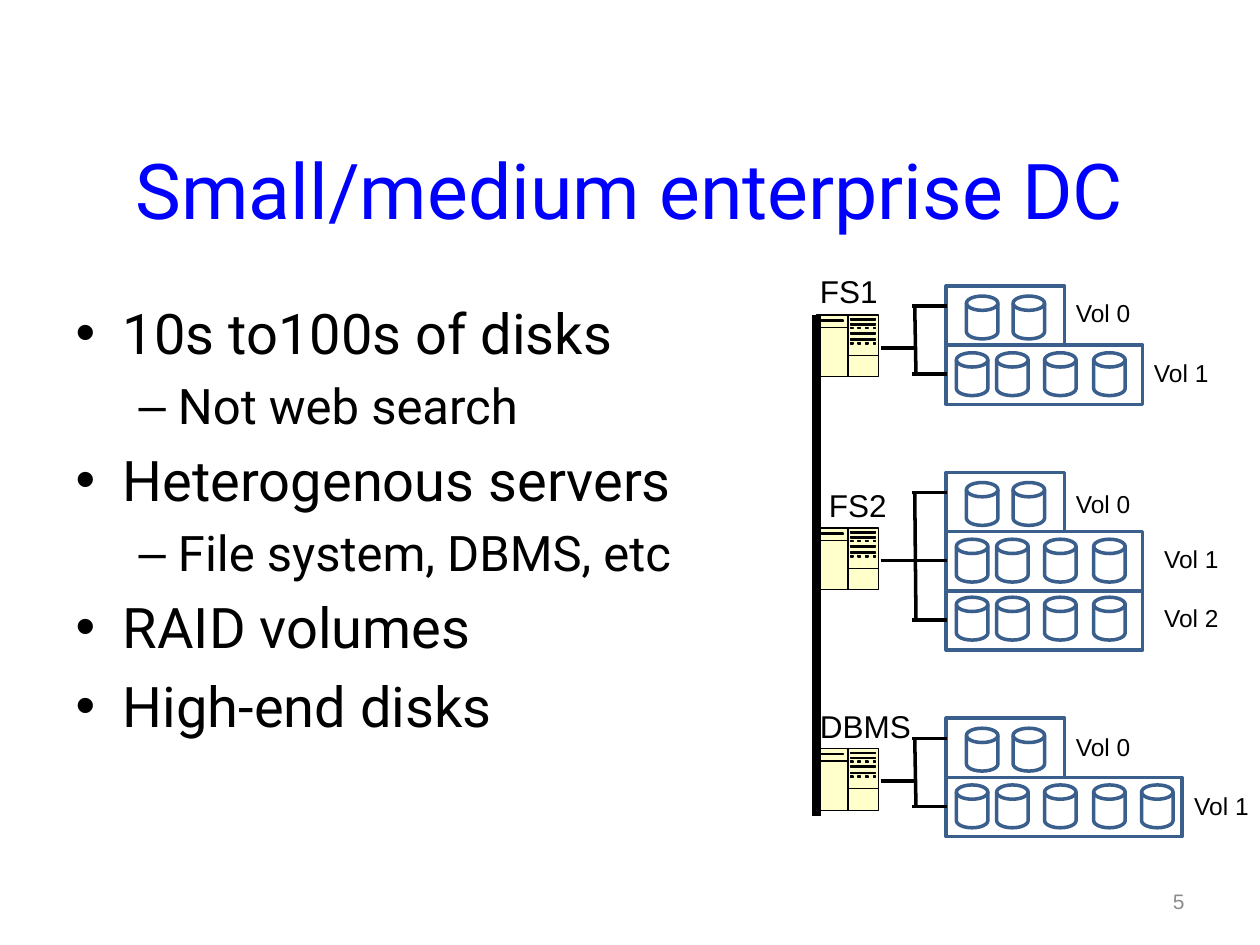
from lxml.etree import SubElement
from pptx import Presentation
from pptx.dml.color import RGBColor
from pptx.enum.shapes import MSO_CONNECTOR, MSO_SHAPE as Shape
from pptx.enum.text import MSO_ANCHOR as Anchor, MSO_AUTO_SIZE as AutoSize, PP_ALIGN as Align
from pptx.oxml.ns import qn
from pptx.util import Inches, Pt

COLORS = {name: RGBColor.from_string(value) for name, value in {
    "title": "0000FF", "text": "000000", "number": "8C8C8C",
    "server": "FFFFCC", "wire": "000000", "disk": "3A5F8C"}.items()}

deck = Presentation()
deck.slide_width, deck.slide_height = Inches(10), Inches(7.5)
page = deck.slides.add_slide(deck.slide_layouts[1])
shapes = page.shapes


def add_label(text, left, top, width, height, size, color="text", align=Align.LEFT):
    box = shapes.add_textbox(Inches(left), Inches(top), Inches(width), Inches(height))
    box.text_frame.word_wrap = True
    box.text_frame.text = text
    para = box.text_frame.paragraphs[0]
    para.alignment = align
    para.font.name, para.font.size = "Arial", Pt(size)
    para.font.color.rgb = COLORS[color]
    return box


def add_wire(x1, y1, x2, y2, width=2):
    wire = shapes.add_connector(MSO_CONNECTOR.STRAIGHT, Inches(x1), Inches(y1), Inches(x2), Inches(y2))
    wire.line.color.rgb, wire.line.width = COLORS["wire"], Pt(width)
    SubElement(wire.element.spPr, qn("a:effectLst"))


# Title
title = shapes.title
title.left, title.top, title.width, title.height = (Inches(n) for n in (0.5, 0.87, 9, 1.25))
title.text_frame.text = "Small/medium enterprise DC"
title.text_frame.vertical_anchor = Anchor.MIDDLE
heading = title.text_frame.paragraphs[0]
heading.alignment = Align.CENTER
heading.font.name, heading.font.size = "Roboto", Pt(44)
heading.font.color.rgb = COLORS["title"]

# Bullet list
points = [("10s to100s of disks", 0), ("Not web search", 1), ("Heterogenous servers", 0),
          ("File system, DBMS, etc", 1), ("RAID volumes", 0), ("High-end disks", 0)]
body = page.placeholders[1]
body.left, body.top, body.width, body.height = (Inches(n) for n in (0.5, 2.32, 5.12, 4.56))
frame = body.text_frame
frame.auto_size = AutoSize.NONE
frame.text = "\n".join(text for text, level in points)
for para, (text, level) in zip(frame.paragraphs, points):
    para.level = level
    para.font.name, para.font.size = "Roboto", Pt(28 if level else 32)
    para.font.color.rgb = COLORS["text"]

# Slide number
number = add_label("5", 7.17, 6.95, 2.33, 0.4, 12, "number", Align.RIGHT)
number.text_frame.vertical_anchor = Anchor.MIDDLE

# Servers: name, label position and width, server top, shelf top,
# then volumes: disk count, shelf width, label position
servers = [
    ("FS1", 6.41, 2.11, 0.7, 2.5, 2.27, [(2, 0.94, 8.44, 2.32), (4, 1.56, 9.06, 2.79)]),
    ("FS2", 6.48, 3.81, 0.7, 4.19, 3.75,
     [(2, 0.94, 8.44, 3.83), (4, 1.56, 9.14, 4.27), (4, 1.56, 9.14, 4.74)]),
    ("DBMS", 6.41, 5.56, 0.94, 5.94, 5.7, [(2, 0.94, 8.44, 5.76), (5, 1.87, 9.38, 6.23)]),
]
SERVER_LEFT, SERVER_SIZE = 6.48, 0.49
SHELF_LEFT, SHELF_HEIGHT = 7.51, 0.47
SHORT_ROW = [7.67, 8.04]
LONG_ROW = [7.59, 7.91, 8.29, 8.68, 9.06]
DISK_DROP = [0.08, 0.06, 0.05]

# Front panel marks: left, top, width, height from the server's corner
panel = [(0.04, 0.04, 0.17, 0.01)]
panel += [(0.27, y, 0.2, 0.01) for y in (0.03, 0.07, 0.14, 0.19)]
panel += [(x, y, 0.02, 0.01) for y in (0.1, 0.22) for x in (0.27, 0.33, 0.39, 0.45)]
# Panel divisions, as open lines
divisions = [[(0, 0.1), (0.25, 0.1)], [(0.25, 0), (0.25, 0.49)], [(0.25, 0.32), (0.49, 0.32)]]
outlines = divisions + [
    [(x, y), (x + w, y), (x + w, y + h), (x, y + h), (x, y)] for x, y, w, h in panel]

for name, label_left, label_top, label_width, server_top, shelf_top, volumes in servers:
    # Server case with its front panel
    case = shapes.add_shape(Shape.RECTANGLE, Inches(SERVER_LEFT), Inches(server_top),
                            Inches(SERVER_SIZE), Inches(SERVER_SIZE))
    case.fill.solid()
    case.fill.fore_color.rgb = COLORS["server"]
    builder = shapes.build_freeform(Inches(SERVER_LEFT), Inches(server_top))
    for outline in outlines:
        points = [(Inches(SERVER_LEFT + x), Inches(server_top + y)) for x, y in outline]
        builder.move_to(*points[0])
        builder.add_line_segments(points[1:], close=False)
    front = builder.convert_to_shape()
    front.fill.background()
    for part in (case, front):
        part.shadow.inherit = False
        part.line.color.rgb, part.line.width = COLORS["wire"], Pt(0.75)
    add_label(name, label_left, label_top, label_width, 0.4, 18)

    # Shelves of disks, one volume each
    branches = []
    for row, (count, width, volume_left, volume_top) in enumerate(volumes):
        top = shelf_top + row * SHELF_HEIGHT
        disks = (LONG_ROW if row else SHORT_ROW)[:count]
        parts = [(Shape.FLOWCHART_MAGNETIC_DISK, left, top + DISK_DROP[row], 0.25, 0.34)
                 for left in disks]
        parts.append((Shape.RECTANGLE, SHELF_LEFT, top, width, SHELF_HEIGHT))
        for kind, *place in parts:
            part = shapes.add_shape(kind, *(Inches(n) for n in place))
            part.shadow.inherit = False
            part.fill.background()
            part.line.color.rgb, part.line.width = COLORS["disk"], Pt(2)
        add_label(f"Vol {row}", volume_left, volume_top, 0.7, 0.34, 14)
        branches.append(top + (0.23 if row else 0.16))
        add_wire(7.24, branches[-1], 7.52, branches[-1])

    # Trunk and link to the server
    add_wire(7.26, branches[0], 7.27, branches[-1])
    add_wire(6.99, server_top + 0.26, 7.27, server_top + 0.26)

# Network backbone
add_wire(SERVER_LEFT, 2.5, SERVER_LEFT, 6.48, 5)

deck.save("out.pptx")
